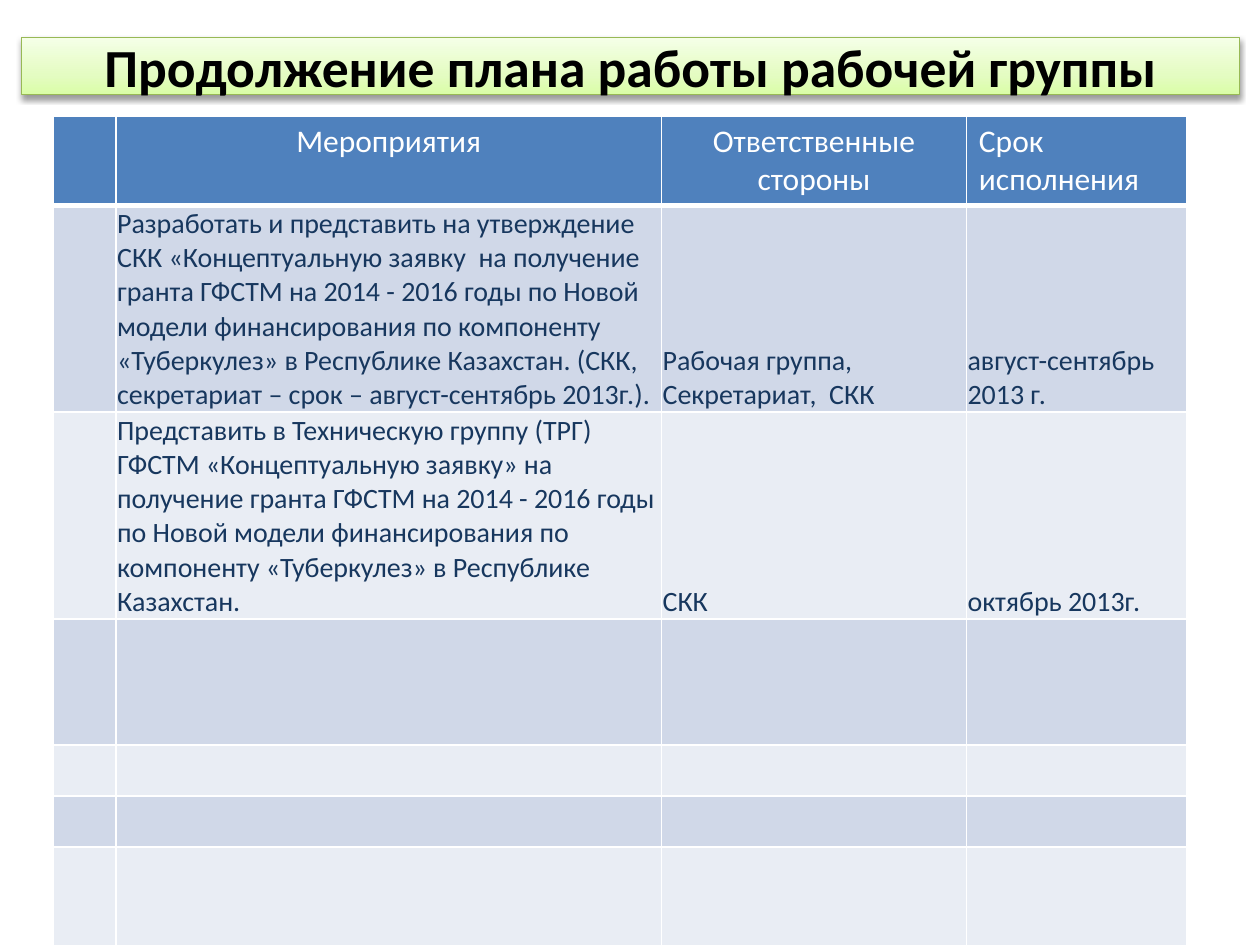
from copy import deepcopy

from lxml import etree
from pptx import Presentation, util as u
from pptx.dml.color import RGBColor
from pptx.enum import shapes, text
from pptx.oxml import ns

FONT = "Calibri"
COLUMNS = [0.5, 4.33, 2.42, 1.75]
ROWS = [0.44, 0.7, 0.7, 1, 0.4, 0.4, 2.2, 0.41]
HEADER_FILL = "4F81BD"
BAND_FILLS = ["E9EDF4", "D0D8E8"]
TITLE_STOPS = [(0, "DAFDA7"), (0.35, "E4FCC2"), (1, "F5FFE7")]
HEADER = ["", "Мероприятия", "Ответственные стороны", "Срок исполнения"]
PLAN = [
    ["",
     "Разработать и представить на утверждение СКК «Концептуальную заявку  на получение "
     "гранта ГФСТМ на 2014 - 2016 годы по Новой модели финансирования по компоненту "
     "«Туберкулез» в Республике Казахстан. (СКК, секретариат – срок – август-сентябрь 2013г.).",
     "Рабочая группа,  Секретариат,  СКК",
     "август-сентябрь 2013 г."],
    ["",
     "Представить в Техническую группу (ТРГ) ГФСТМ «Концептуальную заявку» на получение "
     "гранта ГФСТМ на 2014 - 2016 годы по Новой модели финансирования по компоненту "
     "«Туберкулез» в Республике Казахстан.",
     "СКК",
     "октябрь 2013г."],
]


def colour(value):
    return RGBColor.from_string(value)


def add_element(parent, tag, **attributes):
    element = etree.SubElement(parent, ns.qn(tag))
    for name, value in attributes.items():
        element.set(name, str(value))
    return element


def add_run(paragraph, words, size, value, bold=False):
    run = paragraph.add_run()
    run.text = words
    run.font.name = FONT
    run.font.size = u.Pt(size)
    run.font.bold = bold
    run.font.color.rgb = colour(value)


def add_shadow(shape):
    shape.shadow.inherit = False
    effects = shape.element.spPr.find(ns.qn("a:effectLst"))
    shadow = add_element(effects, "a:outerShdw", blurRad=u.Pt(3.1), dist=u.Pt(1.6),
                         dir=5400000, rotWithShape=0)
    black = add_element(shadow, "a:srgbClr", val="000000")
    add_element(black, "a:alpha", val=38000)


def fill_gradient(shape, stops):
    shape.fill.gradient()
    shape.fill.gradient_angle = 90
    stop_list = shape.element.spPr.find(".//" + ns.qn("a:gsLst"))
    stop_list.append(deepcopy(stop_list[-1]))
    for stop, (position, value) in zip(shape.fill.gradient_stops, stops):
        stop.position = position
        stop.color.rgb = colour(value)


def add_title(slide, box):
    banner = slide.shapes.add_shape(shapes.MSO_SHAPE.RECTANGLE, *box)
    fill_gradient(banner, TITLE_STOPS)
    banner.line.color.rgb = colour("98B955")
    banner.line.width = u.Pt(0.75)
    add_shadow(banner)
    frame = banner.text_frame
    frame.word_wrap = True
    frame.vertical_anchor = text.MSO_ANCHOR.MIDDLE
    paragraph = frame.paragraphs[0]
    paragraph.alignment = text.PP_ALIGN.CENTER
    add_run(paragraph, "Продолжение плана работы рабочей группы", 30.6, "000000", True)


def style_cell(cell, value, bottom_width):
    properties = cell._tc.get_or_add_tcPr()
    for side, width in zip("LRTB", (1, 1, 1, bottom_width)):
        line = add_element(properties, f"a:ln{side}", w=u.Pt(width))
        add_element(add_element(line, "a:solidFill"), "a:srgbClr", val="FFFFFF")
    cell.fill.solid()
    cell.fill.fore_color.rgb = colour(value)


def write_header(cell, words, centred):
    paragraph = cell.text_frame.paragraphs[0]
    paragraph.alignment = text.PP_ALIGN.CENTER if centred else text.PP_ALIGN.LEFT
    add_run(paragraph, words, 18, "FFFFFF")


def write_entry(cell, words):
    cell.vertical_anchor = text.MSO_ANCHOR.BOTTOM
    cell.margin_left = cell.margin_right = cell.margin_top = u.Inches(0.01)
    cell.margin_bottom = 0
    add_run(cell.text_frame.paragraphs[0], words, 16, "17375E")


def add_plan(slide, box):
    table = slide.shapes.add_table(len(ROWS), len(COLUMNS), *box).table
    for column, share in zip(table.columns, COLUMNS):
        column.width = int(box[2] * share / sum(COLUMNS))
    for row, share in zip(table.rows, ROWS):
        row.height = int(box[3] * share / sum(ROWS))
    for index, row in enumerate(table.rows):
        for cell in row.cells:
            if index == 0:
                style_cell(cell, HEADER_FILL, 3)
            else:
                style_cell(cell, BAND_FILLS[index % 2], 1)
    for index, words in enumerate(HEADER):
        if words:
            write_header(table.cell(0, index), words, index < len(HEADER) - 1)
    for row_index, entries in enumerate(PLAN, 1):
        for index, words in enumerate(entries):
            if words:
                write_entry(table.cell(row_index, index), words)


def main():
    presentation = Presentation()
    presentation.slide_width = u.Inches(10)
    presentation.slide_height = u.Inches(7.5)
    slide = presentation.slides.add_slide(presentation.slide_layouts[6])
    width, height = presentation.slide_width, presentation.slide_height

    def area(left, top, across, down):
        return [int(width * left / 10), int(height * top / 7.5),
                int(width * across / 10), int(height * down / 7.5)]

    add_title(slide, area(0.17, 0.3, 9.67, 0.45))
    add_plan(slide, area(0.42, 0.92, 9, sum(ROWS)))
    presentation.save("out.pptx")


if __name__ == "__main__":
    main()
